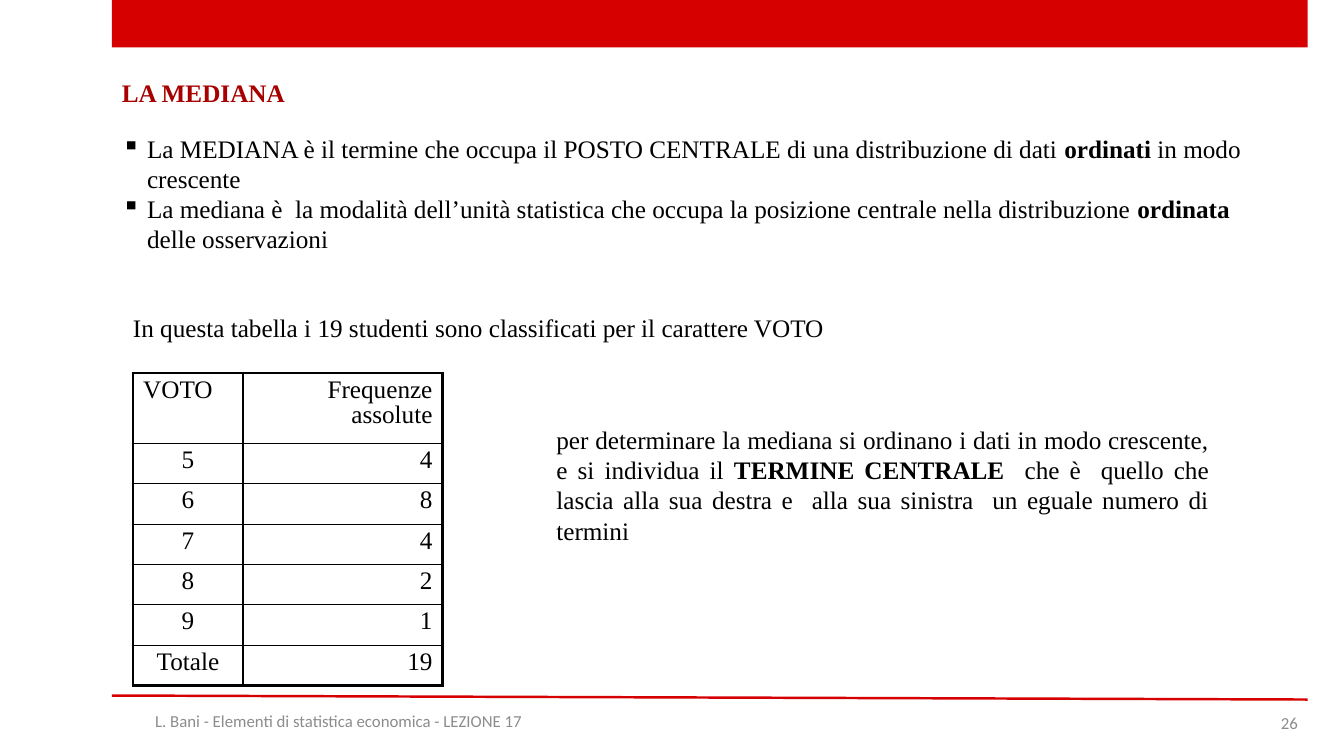
from lxml import etree
from pptx import Presentation
from pptx.dml.color import RGBColor
from pptx.enum.shapes import MSO_CONNECTOR, MSO_SHAPE
from pptx.enum.text import MSO_ANCHOR, PP_ALIGN
from pptx.oxml.ns import qn
from pptx.util import Inches, Pt

LEFT, CENTER, RIGHT, JUSTIFY = PP_ALIGN.LEFT, PP_ALIGN.CENTER, PP_ALIGN.RIGHT, PP_ALIGN.JUSTIFY
TOP, MIDDLE = MSO_ANCHOR.TOP, MSO_ANCHOR.MIDDLE
RECTANGLE, STRAIGHT = MSO_SHAPE.RECTANGLE, MSO_CONNECTOR.STRAIGHT
RED, DARK_RED, BLACK, WHITE, GRAY = "D60000", "A80000", "000000", "FFFFFF", "8C8C8C"
SERIF, SANS = "Times New Roman", "Calibri"


def color(value):
    return RGBColor.from_string(value)


class SlideBuilder:
    """Draws styled elements on the current slide."""

    def __init__(self, slide):
        self.slide = slide

    def bar(self, left, top, width, height):
        shape = self.slide.shapes.add_shape(
            RECTANGLE, Inches(left), Inches(top), Inches(width), Inches(height))
        shape.shadow.inherit = False
        shape.fill.solid()
        shape.fill.fore_color.rgb = color(RED)
        shape.line.fill.background()

    def rule(self, start, end):
        connector = self.slide.shapes.add_connector(
            STRAIGHT, *(Inches(value) for value in start + end))
        connector.line.color.rgb = color(RED)
        connector.line.width = Pt(1.75)
        etree.SubElement(connector._element.spPr, qn("a:effectLst"))

    def add_runs(self, paragraph, parts, align=LEFT, size=18, font=SERIF, ink=BLACK, bold=False):
        paragraph.alignment = align
        for index, part in enumerate(parts):
            run = paragraph.add_run()
            run.text = part
            run.font.size = Pt(size)
            run.font.name = font
            run.font.bold = bold or index % 2 == 1
            run.font.color.rgb = color(ink)

    def text(self, box, paragraphs, anchor=TOP, bullet=None, spacing=None, **style):
        shape = self.slide.shapes.add_textbox(*(Inches(value) for value in box))
        frame = shape.text_frame
        frame.word_wrap = True
        frame.vertical_anchor = anchor
        for index, parts in enumerate(paragraphs):
            paragraph = frame.add_paragraph() if index else frame.paragraphs[0]
            if bullet:
                properties = paragraph._p.get_or_add_pPr()
                properties.set("marL", str(Inches(0.25)))
                properties.set("indent", str(Inches(-0.25)))
                etree.SubElement(properties, qn("a:buChar"), char=bullet)
            if spacing:
                paragraph.line_spacing = spacing
            self.add_runs(paragraph, parts, **style)

    def border(self, cell, side, width):
        line = etree.SubElement(cell._tc.get_or_add_tcPr(), qn(f"a:ln{side}"), w=str(Pt(width)))
        fill = etree.SubElement(line, qn("a:solidFill"))
        etree.SubElement(fill, qn("a:srgbClr"), val=BLACK)

    def table(self, left, top, widths, heights, rows):
        table = self.slide.shapes.add_table(
            len(rows), len(widths), Inches(left), Inches(top),
            Inches(sum(widths)), Inches(sum(heights))).table
        table.first_row = table.horz_banding = False
        for column, width in zip(table.columns, widths):
            column.width = Inches(width)
        last_row, last_column = len(rows) - 1, len(widths) - 1
        for y, values in enumerate(rows):
            table.rows[y].height = Inches(heights[y])
            for x, value in enumerate(values):
                cell = table.cell(y, x)
                outer = {"L": x == 0, "R": x == last_column, "T": y == 0, "B": y == last_row}
                for side, is_outer in outer.items():
                    self.border(cell, side, 2.25 if is_outer else 1)
                cell.fill.solid()
                cell.fill.fore_color.rgb = color(WHITE)
                paragraph = cell.text_frame.paragraphs[0]
                paragraph.line_spacing = 0.9
                align = RIGHT if x else CENTER if y else LEFT
                self.add_runs(paragraph, [value], align)


def main():
    presentation = Presentation()
    presentation.slide_width, presentation.slide_height = Inches(13.33), Inches(7.5)
    builder = SlideBuilder(presentation.slides.add_slide(presentation.slide_layouts[6]))
    builder.bar(1.11, 0, 11.86, 0.47)
    builder.rule((1.11, 6.9), (12.97, 6.94))
    builder.text((1.11, 1.27, 11.55, 1.28), [
        ["La MEDIANA è il termine che occupa il POSTO CENTRALE di una distribuzione di dati ",
         "ordinati", " in modo crescente"],
        ["La mediana è  la modalità dell’unità statistica che occupa la posizione centrale "
         "nella distribuzione ", "ordinata", " delle osservazioni"],
    ], bullet="▪")
    builder.table(1.32, 3.7, [1.09, 1.98], [0.7] + [0.4] * 6, [
        ("VOTO", "Frequenze assolute"),
        ("5", "4"), ("6", "8"), ("7", "4"), ("8", "2"), ("9", "1"),
        ("Totale", "19"),
    ])
    builder.text((1.11, 0.73, 1.84, 0.42), [["LA MEDIANA"]], MIDDLE, spacing=0.9,
                 ink=DARK_RED, bold=True)
    builder.text((1.22, 3.05, 7.31, 0.4), [
        ["In questa tabella i 19 studenti sono classificati per il carattere VOTO"],
    ], align=JUSTIFY)
    builder.text((5.42, 4.16, 6.67, 1.31), [
        ["per determinare la mediana si ordinano i dati in modo crescente, e si individua il ",
         "TERMINE CENTRALE",
         "  che è  quello che lascia alla sua destra e  alla sua sinistra  "
         "un eguale numero di termini"],
    ], align=JUSTIFY)
    footer = {"anchor": MIDDLE, "size": 12, "font": SANS, "ink": GRAY}
    builder.text((1.11, 6.95, 4.5, 0.4),
                 [["L. Bani - Elementi di statistica economica - LEZIONE 17"]],
                 align=CENTER, **footer)
    builder.text((9.97, 6.97, 3, 0.4), [["26"]], align=RIGHT, **footer)
    presentation.save("out.pptx")


if __name__ == "__main__":
    main()
